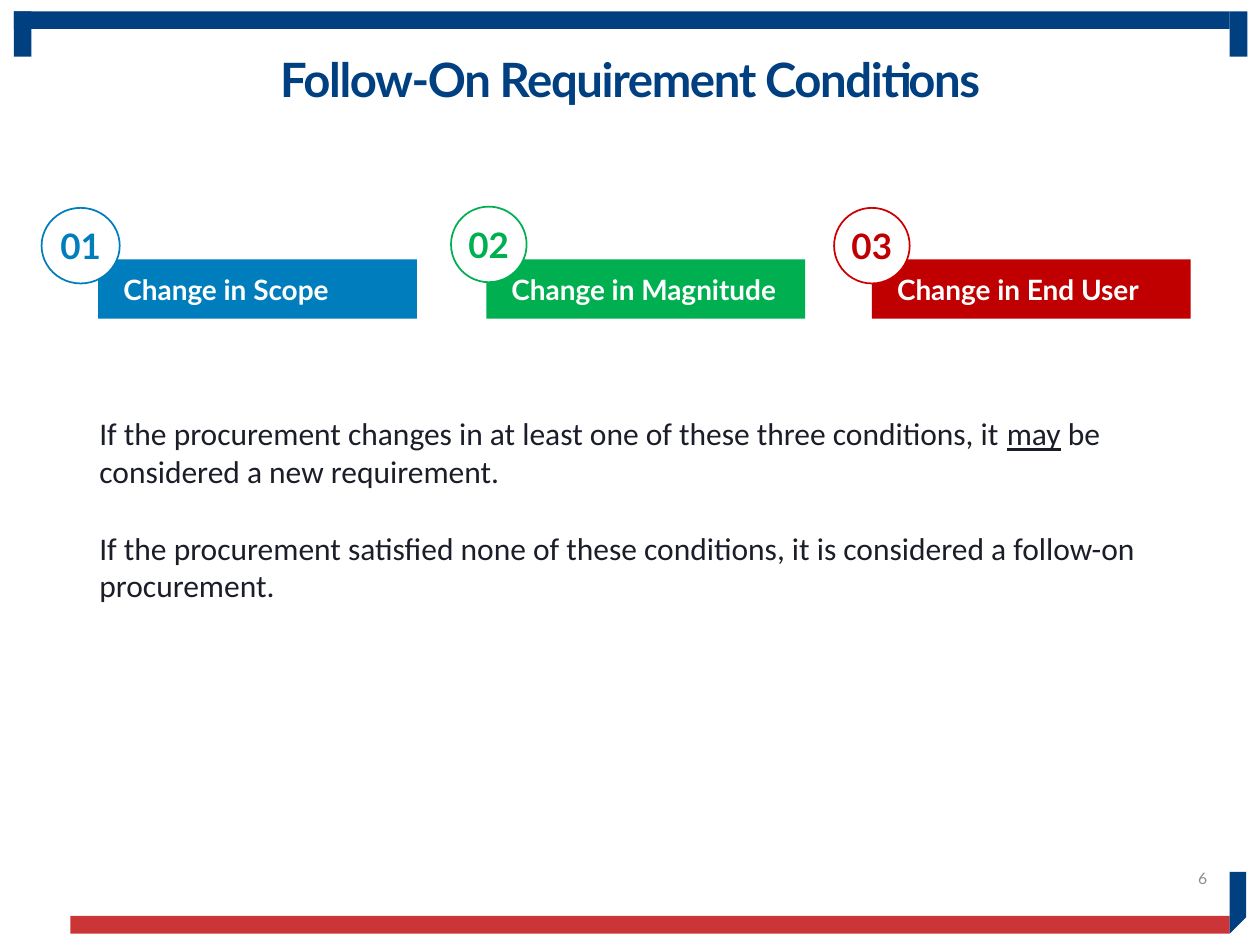
from pptx import Presentation, util as u
from pptx.dml.color import RGBColor
from pptx.enum import shapes, text

# Content
TITLE = "Follow-On Requirement Conditions"
CONDITIONS = [  # label, colour, outline, bar left, circle (left, top, width)
    ("Change in Scope", "007DBC", "007DBC", 0.78, (0.33, 1.65, 0.62)),
    ("Change in Magnitude", "00B050", "00B050", 3.86, (3.58, 1.64, 0.6)),
    ("Change in End User", "C00000", "CC0000", 6.92, (6.62, 1.65, 0.6)),
]
BODY = [  # paragraphs of (text, underlined)
    [("If the procurement changes in at least one of these three conditions, it ", False),
     ("may", True),
     (" be considered a new requirement.", False)],
    [("If the procurement satisfied none of these conditions, "
      "it is considered a follow-on procurement.", False)],
]
PAGE_NUMBER = "6"

THEME = {
    "navy": "003F80", "red": "CC3538", "white": "FFFFFF", "ink": "1B1E29", "grey": "8D8D8E",
    "heading_font": "Lato", "body_font": "Calibri",
    "title": 27, "number": 20, "body": 18, "label": 16, "page": 9,
}
BORDER = 0.14
FRAME = [  # left, top, width, height, colour
    (0.11, 0.09, 9.65, BORDER, "navy"),
    (9.76, 0.09, BORDER, 0.36, "navy"),
    (0.11, 0.09, BORDER, 0.36, "navy"),
    (0.56, 7.27, 9.2, BORDER, "red"),
]
CORNER = [(9.76, 6.92), (9.89, 6.92), (9.89, 7.28), (9.76, 7.41)]

deck = Presentation()
deck.slide_width, deck.slide_height = u.Inches(10), u.Inches(7.5)
page = deck.slides.add_slide(deck.slide_layouts[6])


def paint(shape, fill, outline=None):
    shape.shadow.inherit = False
    shape.fill.solid()
    shape.fill.fore_color.rgb = RGBColor.from_string(fill)
    if outline:
        shape.line.color.rgb = RGBColor.from_string(outline)
        shape.line.width = u.Pt(1)
    else:
        shape.line.fill.background()
    return shape


def add_shape(kind, area, fill, outline=None):
    return paint(page.shapes.add_shape(kind, *map(u.Inches, area)), fill, outline)


def add_box(area):
    return page.shapes.add_textbox(*map(u.Inches, area))


def write(box, paragraphs, size, color, font=THEME["heading_font"], bold=False,
          align=text.PP_ALIGN.LEFT, anchor=text.MSO_ANCHOR.TOP, wrap=True,
          margin=0.1, pad=0.05, gap=0, line=None, tracking=None):
    """Fill a box with text: one string, or paragraphs of (text, underlined)."""
    if isinstance(paragraphs, str):
        paragraphs = [[(paragraphs, False)]]
    frame = box.text_frame
    frame.word_wrap, frame.vertical_anchor = wrap, anchor
    frame.margin_left = frame.margin_right = u.Inches(margin)
    frame.margin_top = frame.margin_bottom = u.Inches(pad)
    for index, spans in enumerate(paragraphs):
        para = frame.add_paragraph() if index else frame.paragraphs[0]
        para.alignment = align
        if index:
            para.space_before = u.Pt(gap)
        if line:
            para.line_spacing = line
        for words, underlined in spans:
            span = para.add_run()
            span.text = words
            span.font.name, span.font.size, span.font.bold = font, u.Pt(size), bold
            span.font.color.rgb = RGBColor.from_string(color)
            if underlined:
                span.font.underline = True
            if tracking:
                span.font._element.set("spc", str(tracking))


# Page frame
for *area, color in FRAME:
    add_shape(shapes.MSO_SHAPE.RECTANGLE, area, THEME[color])
points = [(u.Inches(x), u.Inches(y)) for x, y in CORNER]
outline = page.shapes.build_freeform(*points[0])
outline.add_line_segments(points[1:], close=True)
paint(outline.convert_to_shape(), THEME["navy"])

# Page number
write(add_box((7.43, 6.77, 2.25, 0.4)), PAGE_NUMBER, THEME["page"], THEME["grey"],
      align=text.PP_ALIGN.RIGHT, anchor=text.MSO_ANCHOR.MIDDLE)

# Condition bars with numbered circles
for number, (label, color, edge, left, (x, y, width)) in enumerate(CONDITIONS, 1):
    bar = add_shape(shapes.MSO_SHAPE.RECTANGLE, (left, 2.06, 2.53, 0.47), color)
    write(bar, label, THEME["label"], THEME["white"], bold=True, margin=0.2, pad=0.1)
    circle = add_shape(shapes.MSO_SHAPE.OVAL, (x, y, width, 0.6), THEME["white"], edge)
    write(circle, f"{number:02}", THEME["number"], color, bold=True, wrap=False,
          align=text.PP_ALIGN.CENTER, anchor=text.MSO_ANCHOR.MIDDLE)

# Explanation
write(add_box((0.69, 3.24, 8.82, 1.62)), BODY, THEME["body"], THEME["ink"],
      font=THEME["body_font"], gap=22)

# Title
write(add_box((0.69, 0.4, 8.62, 0.65)), TITLE, THEME["title"], THEME["navy"], bold=True,
      align=text.PP_ALIGN.CENTER, line=0.9, tracking=-80)

deck.save("out.pptx")
